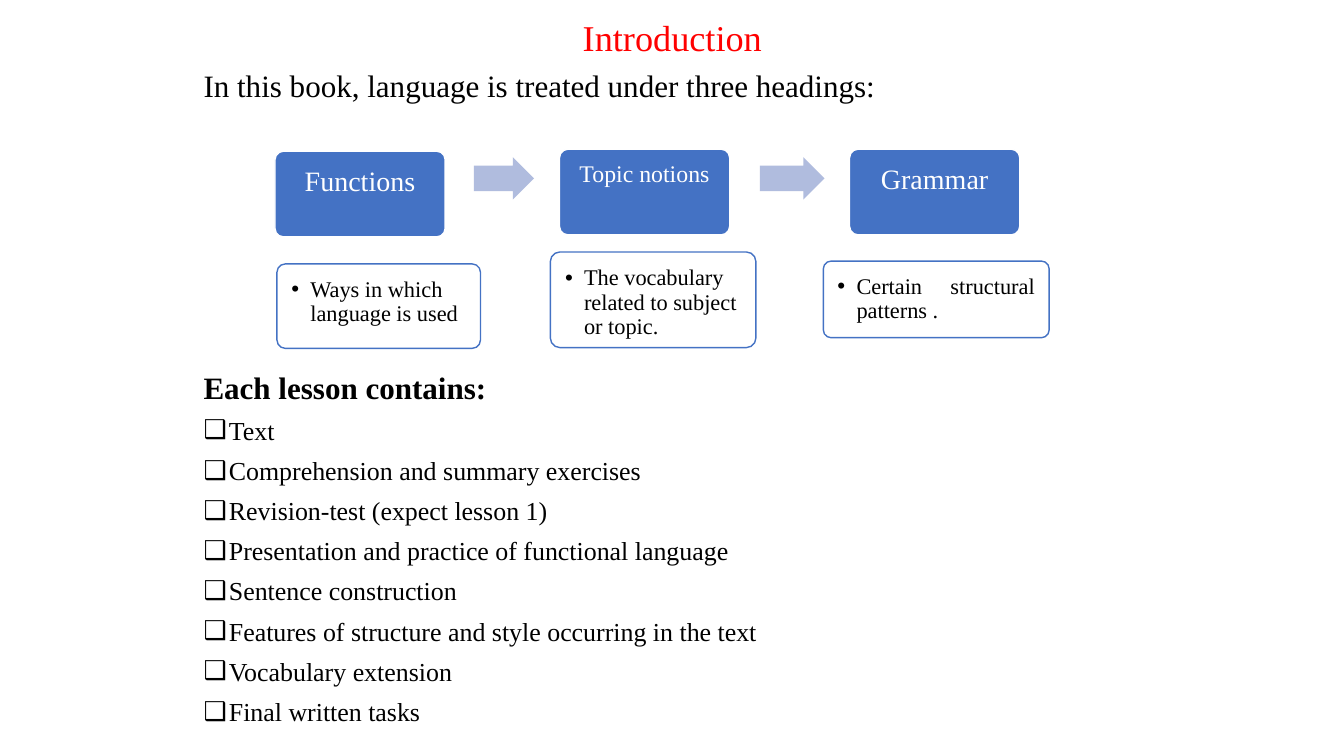
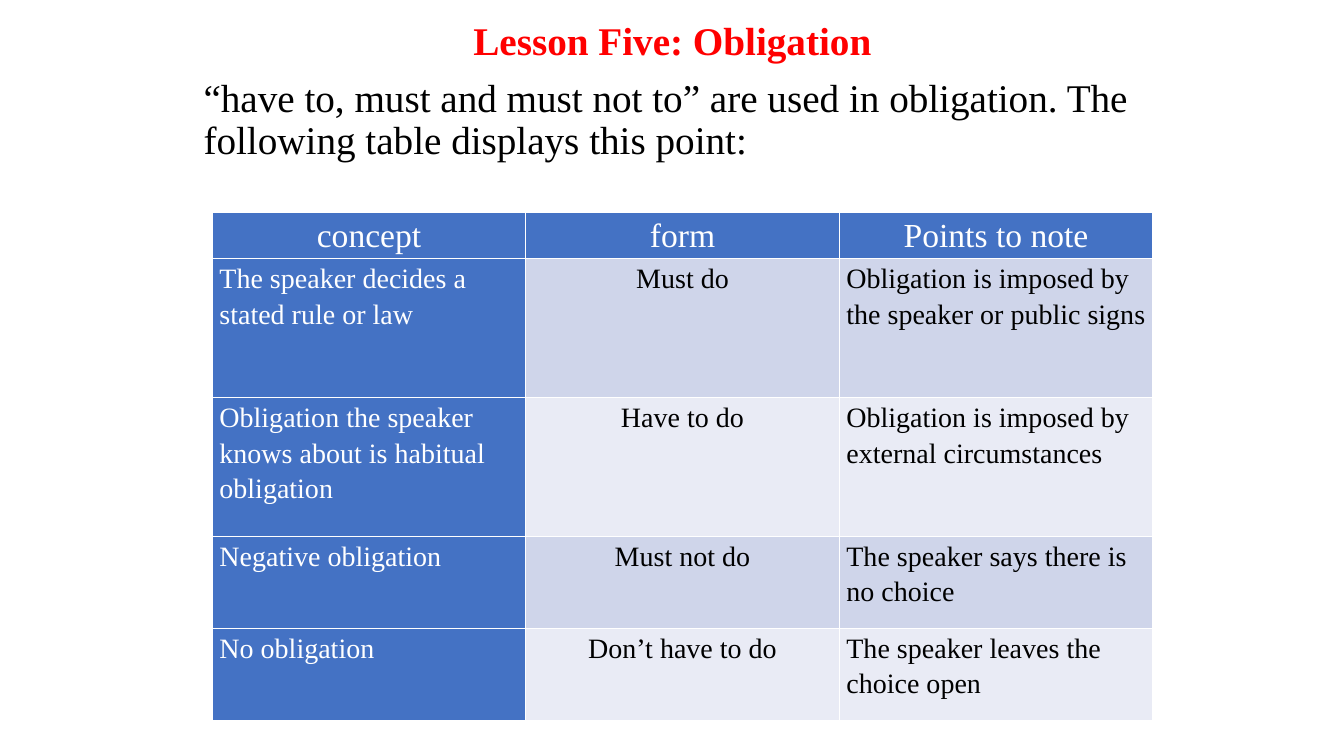
from dataclasses import dataclass

from lxml import etree
from pptx import Presentation
from pptx.dml.color import RGBColor
from pptx.enum.shapes import MSO_SHAPE
from pptx.enum.text import MSO_ANCHOR, PP_ALIGN
from pptx.oxml.ns import qn
from pptx.util import Cm, Pt

ROUND, ARROW = MSO_SHAPE.ROUNDED_RECTANGLE, MSO_SHAPE.RIGHT_ARROW
TOP = MSO_ANCHOR.TOP
LEFT, MID, FULL = PP_ALIGN.LEFT, PP_ALIGN.CENTER, PP_ALIGN.JUSTIFY


@dataclass(frozen=True)
class Theme:
    """Colours, font and type sizes of the deck."""
    font: str = "Times New Roman"
    red: str = "FF0000"
    black: str = "000000"
    white: str = "FFFFFF"
    blue: str = "4472C4"
    pale: str = "B0BCDE"
    bands: tuple = ("CFD5EA", "E9EBF5")
    title: float = 25.9
    lead: float = 22.2
    item: float = 18.5
    large: float = 28
    card: float = 16
    head: float = 24
    cell: float = 20


class Deck:
    """Holds the style and the current slide."""

    def __init__(self, theme):
        """Start an empty wide deck."""
        self.theme = theme
        self.prs = Presentation()
        self.prs.slide_width, self.prs.slide_height = Cm(33.87), Cm(19.05)

    def page(self):
        """Add a blank slide."""
        self.slide = self.prs.slides.add_slide(self.prs.slide_layouts[6])

    def style(self, para, text, size, ink, align=LEFT, bold=False, gap=1.0):
        """Fill and format one paragraph."""
        para.text, para.alignment, para.line_spacing = text, align, gap
        font = para.font
        font.name, font.size, font.bold = self.theme.font, Pt(size), bold
        font.color.rgb = RGBColor.from_string(ink)

    def bullet(self, para, mark, indent):
        """Give a paragraph a hanging bullet."""
        props = para._p.get_or_add_pPr()
        props.set("marL", str(Cm(indent)))
        props.set("indent", str(-Cm(indent)))
        etree.SubElement(props, qn("a:buFont")).set("typeface", "Arial")
        etree.SubElement(props, qn("a:buChar")).set("char", mark)

    def body(self, top, height, gap, rows):
        """Add a text column from (text, size, ink, align, bold, mark) rows."""
        box = self.slide.shapes.add_textbox(
            Cm(4.88), Cm(top), Cm(24.13), Cm(height))
        frame = box.text_frame
        frame.word_wrap = True
        for i, (text, size, ink, align, bold, mark) in enumerate(rows):
            para = frame.add_paragraph() if i else frame.paragraphs[0]
            if i:
                para.space_before = Pt(10)
            if mark:
                self.bullet(para, mark, 0.64)
            self.style(para, text, size, ink, align, bold, gap)

    def intro(self, title, lead, size, small, bold, gap):
        """Add the red title and the lead line under it."""
        look = self.theme
        self.body(0.43, 4, gap, [(title, size, look.red, MID, bold, ""),
                                 (lead, small, look.black, LEFT, False, "")])

    def shape(self, kind, spot, fill, line=None):
        """Add a flat preset shape."""
        form = self.slide.shapes.add_shape(kind, *map(Cm, spot))
        form.shadow.inherit = False
        form.fill.solid()
        form.fill.fore_color.rgb = RGBColor.from_string(fill)
        if line:
            form.line.color.rgb = RGBColor.from_string(line)
            form.line.width = Pt(1)
        else:
            form.line.fill.background()
        return form

    def panel(self, spot, fill, line, pad):
        """Add a rounded box and return its first paragraph."""
        form = self.shape(ROUND, spot, fill, line)
        form.adjustments[0] = 0.1
        frame = form.text_frame
        frame.word_wrap, frame.vertical_anchor = True, TOP
        frame.margin_left = frame.margin_right = Cm(pad)
        frame.margin_top = frame.margin_bottom = Cm(pad)
        return frame.paragraphs[0]

    def head(self, left, top, text, size, pad):
        """Add a blue heading box."""
        look = self.theme
        para = self.panel((left, top, 4.29, 2.16), look.blue, look.white, pad)
        self.style(para, text, size, look.white, MID, gap=0.9)

    def card(self, spot, text, align):
        """Add an outlined box with one bullet."""
        look = self.theme
        para = self.panel(spot, look.white, look.blue, 0.3)
        self.bullet(para, "•", 0.48)
        self.style(para, text, look.card, look.black, align, gap=0.9)

    def arrow(self, left, width):
        """Add a pale arrow between headings."""
        form = self.shape(ARROW, (left, 3.96, width, 1.07), self.theme.pale)
        form.adjustments[0], form.adjustments[1] = 0.6, 0.5

    def table(self, spot, highs, rows):
        """Add a table with a blue first row and column."""
        look = self.theme
        grid = self.slide.shapes.add_table(
            len(rows), len(rows[0]), *map(Cm, spot)).table
        grid.first_col = True
        for r, (high, row) in enumerate(zip(highs, rows)):
            grid.rows[r].height = Cm(high)
            for c, text in enumerate(row):
                cell = grid.cell(r, c)
                cell.margin_left = cell.margin_right = Cm(0.18)
                cell.margin_top = cell.margin_bottom = 0
                edge = r == 0 or c == 0
                fill = look.blue if edge else look.bands[(r - 1) % 2]
                cell.fill.solid()
                cell.fill.fore_color.rgb = RGBColor.from_string(fill)
                self.style(cell.text_frame.paragraphs[0], text,
                           look.cell if r else look.head,
                           look.white if edge else look.black,
                           MID if r == 0 or c == 1 else LEFT, gap=1.15)


def start(deck):
    """Build the introduction slide."""
    look = deck.theme
    deck.page()
    deck.intro("Introduction",
               "In this book, language is treated under three headings:",
               look.title, look.lead, False, 0.84)
    for left, top, text, size, pad in (
            (6.93, 3.81, "Functions", 20, 0.34),
            (14.1, 3.76, "Topic notions", 17, 0.26),
            (21.41, 3.76, "Grammar", 20, 0.34)):
        deck.head(left, top, text, size, pad)
    for spot, text, align in (
            ((6.98, 6.65, 5.13, 2.13), "Ways in which language is used", LEFT),
            ((13.87, 6.35, 5.18, 2.41),
             "The vocabulary related to subject or topic.", LEFT),
            ((20.75, 6.58, 5.69, 1.93),
             "Certain structural patterns .", FULL)):
        deck.card(spot, text, align)
    deck.arrow(11.94, 1.52)
    deck.arrow(19.15, 1.63)
    items = ("Text", "Comprehension and summary exercises",
             "Revision-test (expect lesson 1)",
             "Presentation and practice of functional language",
             "Sentence construction",
             "Features of structure and style occurring in the text",
             "Vocabulary extension", "Final written tasks")
    rows = [("Each lesson contains:", look.lead, look.black, LEFT, True, "")]
    rows += [(t, look.item, look.black, LEFT, False, "❑") for t in items]
    deck.body(9.3, 9.1, 0.84, rows)


def lesson(deck):
    """Build the obligation slide."""
    look = deck.theme
    deck.page()
    deck.intro("Lesson Five: Obligation",
               "“have to, must and must not to” are used in obligation. "
               "The following table displays this point:",
               look.large, look.large, True, 0.9)
    deck.table((5.35, 5.35, 23.7, 12.75), (1.11, 3.5, 3.5, 2.32, 2.32), (
        ("concept", "form", "Points to note"),
        ("The speaker decides a stated rule or law", "Must do",
         "Obligation is imposed by the speaker or public signs"),
        ("Obligation the speaker knows about is habitual obligation",
         "Have to do", "Obligation is imposed by external circumstances"),
        ("Negative obligation", "Must not do",
         "The speaker says there is no choice"),
        ("No obligation", "Don’t have to do",
         "The speaker leaves the choice open")))


def main():
    """Build and save the deck."""
    deck = Deck(Theme())
    start(deck)
    lesson(deck)
    deck.prs.save("out.pptx")


if __name__ == "__main__":
    main()
